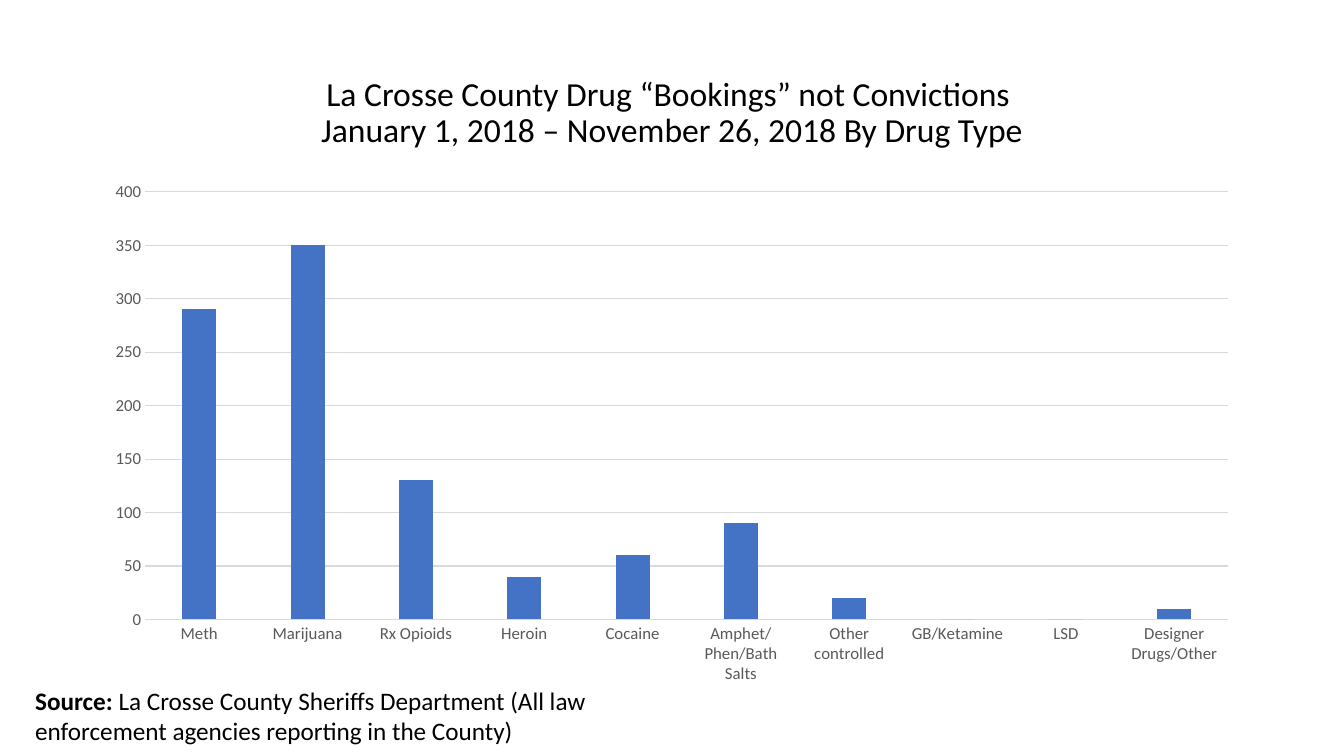
from dataclasses import dataclass

from pptx import Presentation
from pptx.chart.data import CategoryChartData
from pptx.dml.color import RGBColor
from pptx.enum.chart import XL_CHART_TYPE, XL_TICK_MARK
from pptx.enum.text import MSO_ANCHOR, PP_ALIGN
from pptx.util import Pt


@dataclass(frozen=True)
class Theme:
    font: str = "Calibri"
    text: RGBColor = RGBColor(0x00, 0x00, 0x00)
    axis_text: RGBColor = RGBColor(0x59, 0x59, 0x59)
    grid: RGBColor = RGBColor(0xD9, 0xD9, 0xD9)
    bar: RGBColor = RGBColor(0x44, 0x72, 0xC4)
    title_size: int = 24
    source_size: int = 18
    axis_size: int = 12
    line_width: float = 0.75


THEME = Theme()

BOOKINGS = {
    "Meth": 290,
    "Marijuana": 350,
    "Rx Opioids": 130,
    "Heroin": 40,
    "Cocaine": 60,
    "Amphet/Phen/Bath Salts": 90,
    "Other controlled": 20,
    "GB/Ketamine": 0,
    "LSD": 0,
    "Designer Drugs/Other": 10,
}


def set_font(font, size, color):
    font.name = THEME.font
    font.size = Pt(size)
    font.color.rgb = color


def set_line(line, color):
    line.color.rgb = color
    line.width = Pt(THEME.line_width)


def add_text_frame(slide, box):
    text_frame = slide.shapes.add_textbox(*map(Pt, box)).text_frame
    text_frame.word_wrap = True
    return text_frame


def add_title(slide, box):
    text_frame = add_text_frame(slide, box)
    text_frame.vertical_anchor = MSO_ANCHOR.MIDDLE
    paragraph = text_frame.paragraphs[0]
    paragraph.text = (
        "La Crosse County Drug “Bookings” not Convictions \v"
        "January 1, 2018 – November 26, 2018 By Drug Type"
    )
    paragraph.alignment = PP_ALIGN.CENTER
    paragraph.line_spacing = 0.9
    set_font(paragraph.font, THEME.title_size, THEME.text)


def add_bookings_chart(slide, box):
    data = CategoryChartData()
    data.categories = BOOKINGS.keys()
    data.add_series("Series 1", BOOKINGS.values())
    chart = slide.shapes.add_chart(
        XL_CHART_TYPE.COLUMN_CLUSTERED, *map(Pt, box), data
    ).chart
    chart.has_title = False
    chart.has_legend = False
    set_font(chart.font, THEME.axis_size, THEME.axis_text)

    for axis in (chart.category_axis, chart.value_axis):
        axis.major_tick_mark = XL_TICK_MARK.NONE
        axis.minor_tick_mark = XL_TICK_MARK.NONE
        set_font(axis.tick_labels.font, THEME.axis_size, THEME.axis_text)
    set_line(chart.category_axis.format.line, THEME.grid)

    value_axis = chart.value_axis
    value_axis.minimum_scale = 0
    value_axis.maximum_scale = 400
    value_axis.major_unit = 50
    value_axis.format.line.fill.background()
    set_line(value_axis.major_gridlines.format.line, THEME.grid)

    plot = chart.plots[0]
    plot.gap_width = 219
    plot.overlap = -27
    plot.vary_by_categories = False
    fill = plot.series[0].format.fill
    fill.solid()
    fill.fore_color.rgb = THEME.bar


def add_source(slide, box):
    paragraph = add_text_frame(slide, box).paragraphs[0]
    set_font(paragraph.font, THEME.source_size, THEME.text)
    label = paragraph.add_run()
    label.text = "Source:"
    label.font.bold = True
    paragraph.add_run().text = (
        " La Crosse County Sheriffs Department "
        "(All law enforcement agencies reporting in the County)"
    )


def main():
    presentation = Presentation()
    presentation.slide_width = Pt(960)
    presentation.slide_height = Pt(540)
    slide = presentation.slides.add_slide(presentation.slide_layouts[6])
    add_title(slide, (66, 28.75, 828, 104.4))
    add_bookings_chart(slide, (66, 122.4, 828, 373.2))
    add_source(slide, (18, 486, 480, 51))
    presentation.save("out.pptx")


if __name__ == "__main__":
    main()
